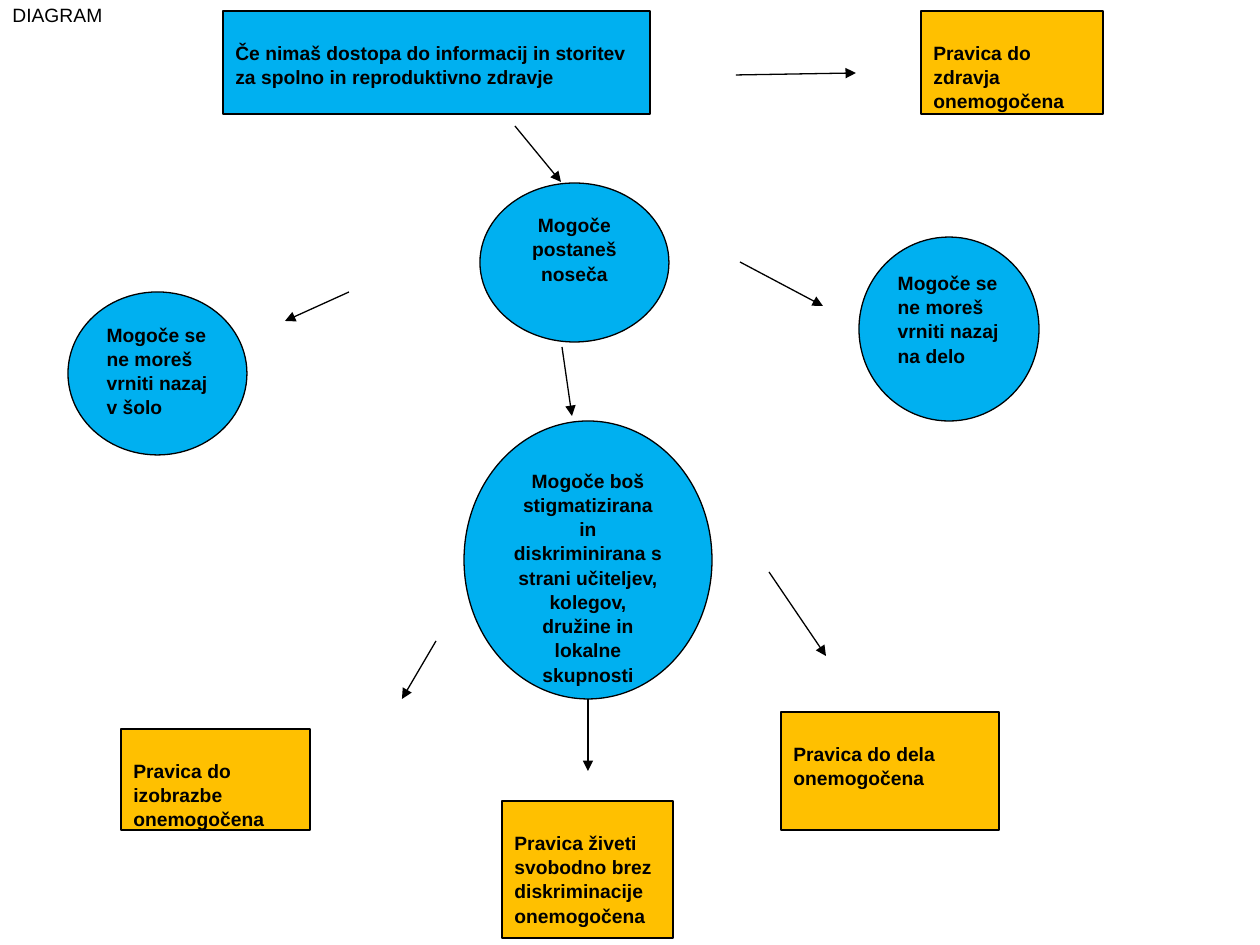
from lxml.etree import SubElement
from pptx import Presentation
from pptx.dml.color import RGBColor
from pptx.enum.shapes import MSO_CONNECTOR, MSO_SHAPE
from pptx.enum.text import MSO_ANCHOR, PP_ALIGN
from pptx.oxml.ns import qn
from pptx.util import Inches, Pt

PX = Inches(1) / 126
BLUE = RGBColor(0x00, 0xB0, 0xF0)
AMBER = RGBColor(0xFF, 0xC0, 0x00)
BLACK = RGBColor(0x00, 0x00, 0x00)


def px(*lengths):
    return [round(length * PX) for length in lengths]


def write(shape, lines, align, top, bold):
    frame = shape.text_frame
    frame.word_wrap = True
    frame.vertical_anchor = MSO_ANCHOR.TOP
    frame.margin_top = px(top)[0]
    frame.text = lines
    for paragraph in frame.paragraphs:
        paragraph.alignment = align
        paragraph.line_spacing = 1.05
        paragraph.font.name = "Arial"
        paragraph.font.size = Pt(11)
        paragraph.font.bold = bold
        paragraph.font.color.rgb = BLACK


presentation = Presentation()
presentation.slide_width, presentation.slide_height = px(1260, 945)
slide = presentation.slides.add_slide(presentation.slide_layouts[6])

RECTANGLE = MSO_SHAPE.RECTANGLE
PROCESS = MSO_SHAPE.FLOWCHART_PROCESS
CIRCLE = MSO_SHAPE.FLOWCHART_CONNECTOR
LEFT, CENTER = PP_ALIGN.LEFT, PP_ALIGN.CENTER
TOP_MARGIN = {RECTANGLE: 29, PROCESS: 29, CIRCLE: 6}

nodes = [
    (RECTANGLE, BLUE, (223, 11, 427, 103), LEFT,
     "Če nimaš dostopa do informacij in storitev\nza spolno in reproduktivno zdravje"),
    (PROCESS, AMBER, (921, 11, 182, 103), LEFT, "Pravica do zdravja onemogočena"),
    (CIRCLE, BLUE, (480, 183, 189, 159), CENTER, "Mogoče postaneš noseča"),
    (CIRCLE, BLUE, (68, 292, 179, 163), LEFT, "Mogoče se ne moreš vrniti nazaj v šolo"),
    (CIRCLE, BLUE, (859, 237, 180, 184), LEFT, "Mogoče se ne moreš vrniti nazaj na delo"),
    (CIRCLE, BLUE, (464, 421, 248, 278), CENTER,
     "Mogoče boš stigmatizirana in diskriminirana s strani učiteljev, kolegov, "
     "družine in lokalne skupnosti"),
    (RECTANGLE, AMBER, (121, 729, 189, 101), LEFT, "Pravica do izobrazbe onemogočena"),
    (RECTANGLE, AMBER, (502, 801, 171, 137), LEFT,
     "Pravica živeti svobodno brez diskriminacije onemogočena"),
    (RECTANGLE, AMBER, (781, 712, 218, 118), LEFT, "Pravica do dela onemogočena"),
]
for kind, fill, box, align, lines in nodes:
    shape = slide.shapes.add_shape(kind, *px(*box))
    shape.shadow.inherit = False
    shape.fill.solid()
    shape.fill.fore_color.rgb = fill
    shape.line.color.rgb = BLACK
    shape.line.width = Pt(0.75)
    write(shape, lines, align, TOP_MARGIN[kind], True)

arrows = [
    (736, 75, 856, 73),
    (515, 126, 561, 182),
    (349, 292, 285, 321),
    (740, 262, 823, 306),
    (562, 347, 572, 416),
    (436, 641, 402, 699),
    (588, 699, 588, 771),
    (769, 572, 826, 656),
]
for ends in arrows:
    arrow = slide.shapes.add_connector(MSO_CONNECTOR.STRAIGHT, *px(*ends))
    arrow.line.color.rgb = BLACK
    arrow.line.width = Pt(0.75)
    SubElement(arrow.line._get_or_add_ln(), qn("a:tailEnd"), type="triangle")
    SubElement(arrow._element.spPr, qn("a:effectLst"))

title = slide.shapes.add_textbox(*px(0, 0, 1260, 63))
write(title, "DIAGRAM", LEFT, 2, False)

presentation.save("out.pptx")
